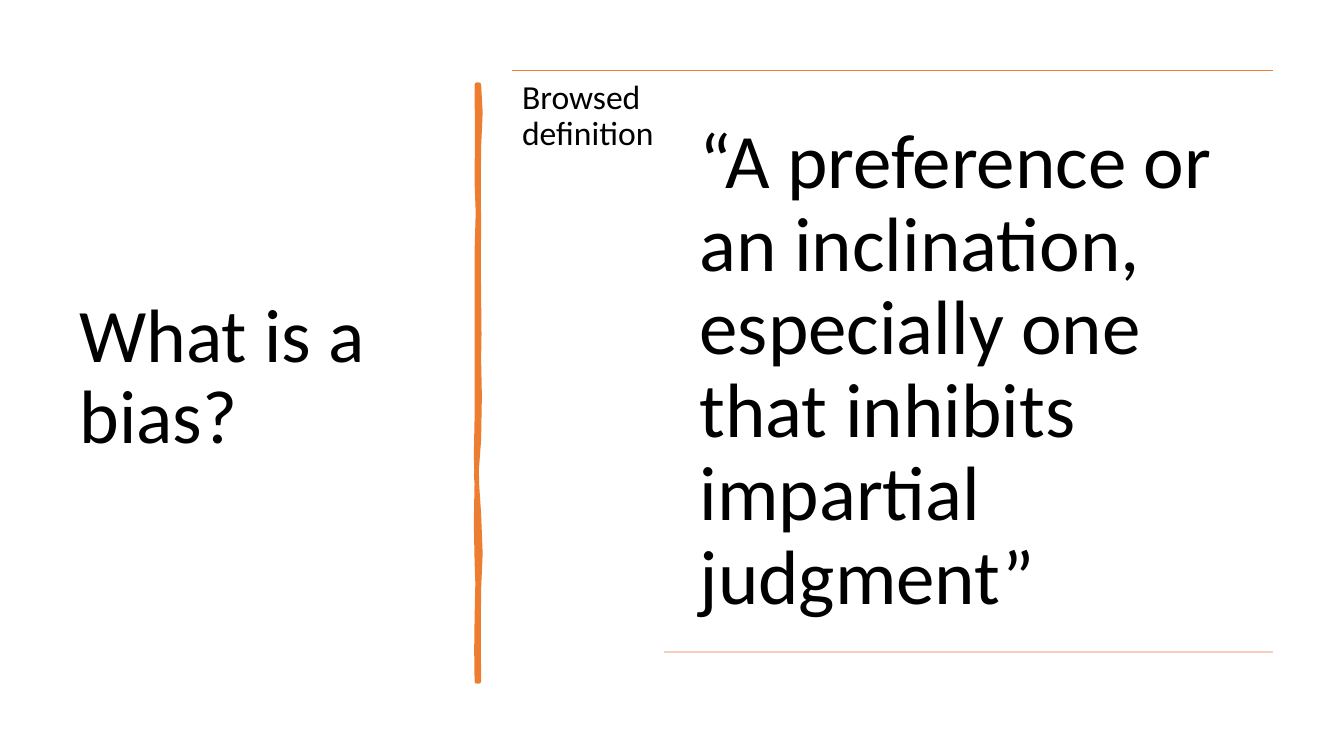
from pptx import Presentation, util as u
from pptx.dml.color import RGBColor
from pptx.enum import shapes, text
from pptx.oxml.ns import qn
from lxml import etree

W, H = 13.33, 7.5
ORANGE, PALE, BLACK = "ED7D31", "F6CCBE", "000000"
FONT = "Calibri"
STEPS = 2

TITLE = ("What is a bias?", (0.69, 0.7, 3.74, 6.11), (0.1, 0.05), 54, text.MSO_ANCHOR.MIDDLE)
LABEL = ("Browsed definition", (5.08, 0.7, 1.51, 6.05), (0.1, 0.1), 24, text.MSO_ANCHOR.TOP)
QUOTE = ("“A preference or an inclination, especially one that inhibits impartial judgment”",
         (6.71, 0.98, 5.92, 5.5), (0.23, 0.23), 55, text.MSO_ANCHOR.TOP)
TOP_RULE = (5.08, 0.7, ORANGE)
BOTTOM_RULE = (6.59, 6.47, PALE)
RULE_END = 12.63

BAR_START = (4.75, 0.84)
BAR_CURVES = [
    (4.77, 1.02, 4.77, 1.19, 4.75, 1.46), (4.73, 1.73, 4.76, 1.95, 4.75, 2.26),
    (4.74, 2.57, 4.75, 2.62, 4.75, 2.94), (4.74, 3.25, 4.77, 3.42, 4.75, 3.56),
    (4.73, 3.7, 4.79, 4.14, 4.75, 4.36), (4.71, 4.57, 4.72, 4.84, 4.75, 5.1),
    (4.77, 5.36, 4.77, 5.64, 4.75, 5.84), (4.73, 6.03, 4.76, 6.5, 4.75, 6.76),
    (4.74, 6.76, 4.73, 6.76, 4.73, 6.76), (4.74, 6.46, 4.71, 6.44, 4.73, 6.13),
    (4.74, 5.83, 4.74, 5.7, 4.73, 5.57), (4.72, 5.44, 4.72, 4.95, 4.73, 4.77),
    (4.73, 4.59, 4.71, 4.45, 4.73, 4.15), (4.74, 3.86, 4.72, 3.73, 4.73, 3.35),
    (4.74, 2.98, 4.72, 2.81, 4.73, 2.5), (4.74, 2.18, 4.75, 2, 4.73, 1.81),
    (4.7, 1.63, 4.77, 1.04, 4.73, 0.84),
]


def color(value):
    return RGBColor.from_string(value)


def assign(obj, values):
    for name, value in values.items():
        setattr(obj, name, value)


def paint(fmt, value):
    fmt.solid()
    fmt.fore_color.rgb = color(value)


def curve_points(start, curves):
    for x1, y1, x2, y2, x3, y3 in curves:
        for i in range(1, STEPS + 1):
            t = i / STEPS
            weights = ((1 - t) ** 3, 3 * t * (1 - t) ** 2, 3 * t * t * (1 - t), t ** 3)
            xs, ys = (start[0], x1, x2, x3), (start[1], y1, y2, y3)
            yield tuple(u.Inches(sum(w * v for w, v in zip(weights, vs))) for vs in (xs, ys))
        start = (x3, y3)


def add_bar(s):
    builder = s.shapes.build_freeform(*map(u.Inches, BAR_START))
    builder.add_line_segments(list(curve_points(BAR_START, BAR_CURVES)), close=True)
    sp = builder.convert_to_shape()
    sp.shadow.inherit = False
    sp.line.width = u.Pt(3.25)
    for fmt in (sp.fill, sp.line.fill):
        paint(fmt, ORANGE)


def add_text(parent, wording, box, inset, size, anchor):
    tf = parent.shapes.add_textbox(*map(u.Inches, box)).text_frame
    side, top = map(u.Inches, inset)
    assign(tf, {"word_wrap": True, "vertical_anchor": anchor, "margin_left": side,
                "margin_right": side, "margin_top": top, "margin_bottom": top})
    p = tf.paragraphs[0]
    assign(p, {"line_spacing": 0.9, "alignment": text.PP_ALIGN.LEFT})
    r = p.add_run()
    r.text = wording
    assign(r.font, {"name": FONT, "size": u.Pt(size)})
    r.font.color.rgb = color(BLACK)


def add_rule(parent, left, y, line_color):
    c = parent.shapes.add_connector(shapes.MSO_CONNECTOR.STRAIGHT,
                                    *map(u.Inches, (left, y, RULE_END, y)))
    c.line.width = u.Pt(1)
    paint(c.line.fill, line_color)
    etree.SubElement(c._element.spPr, qn("a:effectLst"))


def main():
    prs = Presentation()
    assign(prs, {"slide_width": u.Inches(W), "slide_height": u.Inches(H)})
    s = prs.slides.add_slide(prs.slide_layouts[6])
    add_text(s, *TITLE)
    add_bar(s)
    definition = s.shapes.add_group_shape()
    add_rule(definition, *TOP_RULE)
    add_text(definition, *LABEL)
    add_text(definition, *QUOTE)
    add_rule(definition, *BOTTOM_RULE)
    prs.save("out.pptx")


if __name__ == "__main__":
    main()
